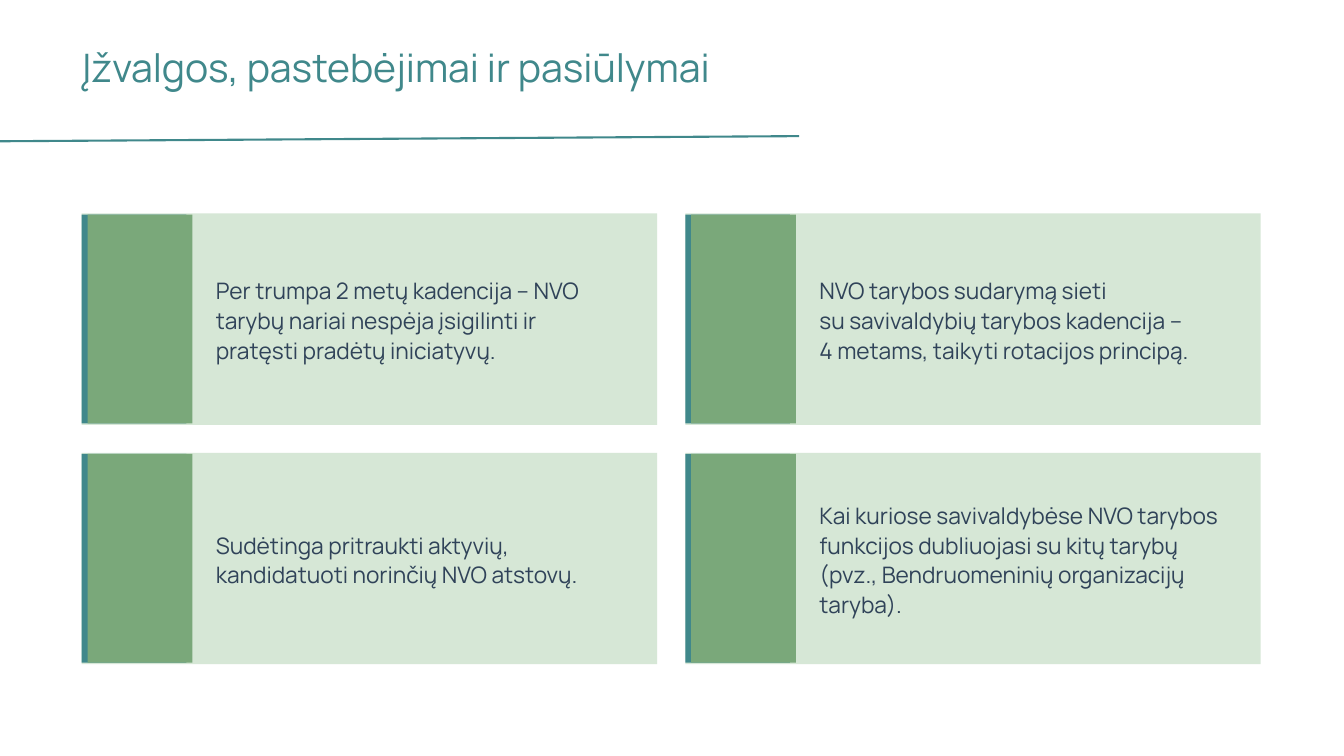
import pptx
import pptx.dml.color
import pptx.enum.shapes
import pptx.enum.text
import pptx.oxml.xmlchemy
import pptx.util
from lxml import etree

Cm = pptx.util.Cm
TEAL = pptx.dml.color.RGBColor(0x40, 0x88, 0x8B)
GREEN = pptx.dml.color.RGBColor(0x7A, 0xA8, 0x7A)
PALE = pptx.dml.color.RGBColor(0xD6, 0xE7, 0xD6)
NAVY = pptx.dml.color.RGBColor(0x30, 0x43, 0x59)
LEFT, TOP = 2.06, 5.38
COLUMN_STEP, ROW_STEP = 15.21, 6.03
DRAWING = "{http://schemas.openxmlformats.org/drawingml/2006/main}"
JUSTIFY = pptx.enum.text.PP_ALIGN.JUSTIFY

INSIGHTS = [
    (0, 0, 9.96, None, ["Per trumpa 2 metų kadencija – NVO tarybų nariai nespėja įsigilinti ir pratęsti pradėtų iniciatyvų."]),
    (0, 1, 10.57, None, ["Sudėtinga pritraukti aktyvių, kandidatuoti norinčių NVO atstovų."]),
    (1, 1, 10.4, None, ["Kai kuriose savivaldybėse NVO tarybos funkcijos dubliuojasi su kitų tarybų (pvz., Bendruomeninių organizacijų taryba)."]),
    (1, 0, 11.13, JUSTIFY, ["NVO tarybos sudarymą sieti", "su savivaldybių tarybos kadencija –", "4 metams, taikyti rotacijos principą."]),
]


class InsightSlide:
    """Draws the elements of one slide in a shared style."""

    def __init__(self, slide, font="Manrope"):
        self.shapes = slide.shapes
        self.font = font

    def block(self, left, top, width, height, color):
        block = self.shapes.add_shape(
            pptx.enum.shapes.MSO_SHAPE.RECTANGLE, Cm(left), Cm(top), Cm(width), Cm(height))
        block.fill.solid()
        block.fill.fore_color.rgb = color
        block.line.fill.background()
        block.shadow.inherit = False

    def rule(self, x1, y1, x2, y2):
        rule = self.shapes.add_connector(
            pptx.enum.shapes.MSO_CONNECTOR.STRAIGHT, Cm(x1), Cm(y1), Cm(x2), Cm(y2))
        rule.line.color.rgb = TEAL
        rule.line.width = pptx.util.Pt(1.5)
        etree.SubElement(rule._element.spPr, DRAWING + "effectLst")

    def text(self, left, top, width, height, lines, size, color, frame_format, paragraph_format):
        frame = self.shapes.add_textbox(Cm(left), Cm(top), Cm(width), Cm(height)).text_frame
        for name, value in {"word_wrap": True, **frame_format}.items():
            setattr(frame, name, value)
        frame.text = "\n".join(lines)
        for paragraph in frame.paragraphs:
            for name, value in paragraph_format.items():
                setattr(paragraph, name, value)
            for name, value in {"name": self.font, "size": pptx.util.Pt(size)}.items():
                setattr(paragraph.font, name, value)
            paragraph.font.color.rgb = color

    def title(self, wording):
        self.text(1.83, 0.97, 30.68, 1.45, [wording], 28, TEAL, {}, {})

    def card(self, column, row, text_width, alignment, lines):
        left, top = LEFT + column * COLUMN_STEP, TOP + row * ROW_STEP
        self.block(left, top, 14.5, 5.33, PALE)
        for inset, color in ((0, TEAL), (0.15, GREEN)):
            self.block(left + inset, top + 0.03, 2.64, 5.26, color)
        margins = dict.fromkeys(("margin_left", "margin_top", "margin_right", "margin_bottom"), 0)
        self.text(left + 3.38, top + 1.13, text_width, 3.07, lines, 16.2, NAVY,
                  {"vertical_anchor": pptx.enum.text.MSO_ANCHOR.MIDDLE, **margins},
                  {"line_spacing": 1.1, "alignment": alignment})


def main():
    deck = pptx.Presentation()
    deck.slide_width, deck.slide_height = Cm(33.87), Cm(19.05)
    page = InsightSlide(deck.slides.add_slide(deck.slide_layouts[6]))
    page.title("Įžvalgos, pastebėjimai ir pasiūlymai")
    page.rule(-0.05, 3.56, 20.14, 3.43)
    for insight in INSIGHTS:
        page.card(*insight)
    deck.save("out.pptx")


if __name__ == "__main__":
    main()
